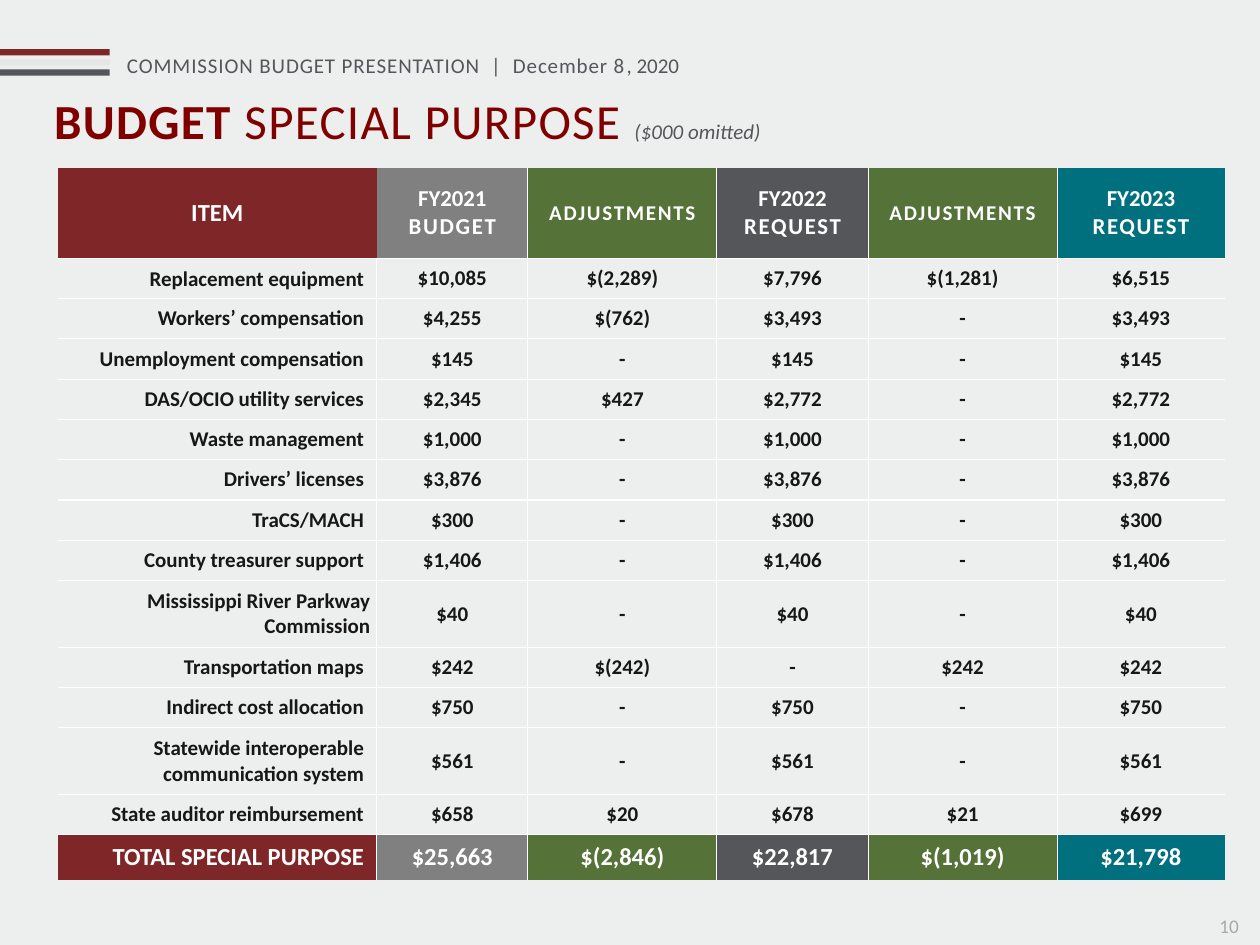
from lxml.etree import SubElement
from pptx import Presentation
from pptx.dml.color import RGBColor
from pptx.enum.shapes import MSO_SHAPE
from pptx.enum.text import MSO_ANCHOR, MSO_AUTO_SIZE, PP_ALIGN
from pptx.oxml.ns import qn
from pptx.util import Inches, Pt

FONT = "Calibri"
COLORS = {
    "background": "EDEEEE", "title": "800000", "maroon": "7F2629",
    "stripe": "E7E6E6", "slate": "54565A", "gray": "808080",
    "green": "557238", "teal": "00707F", "white": "FFFFFF",
    "ink": "181717", "header": "55565A", "page": "A7A8A9",
}
COLUMN_FILLS = ["maroon", "gray", "green", "slate", "green", "teal"]
COLUMN_WIDTHS = [2.53, 1.2, 1.5, 1.2, 1.5, 1.33]
HEADINGS = [["ITEM"], ["FY2021", "BUDGET"], ["ADJUSTMENTS"],
            ["FY2022", "REQUEST"], ["ADJUSTMENTS"], ["FY2023", "REQUEST"]]
# Size and letter spacing of each heading line
HEADING_STYLES = {"ITEM": (14, 0), "ADJUSTMENTS": (12, 1),
                  "BUDGET": (13, 1), "REQUEST": (13, 1)}
FISCAL_YEAR_STYLE = (13, 0)
ITEMS = [
    ["Replacement equipment", "$10,085", "$(2,289)", "$7,796", "$(1,281)", "$6,515"],
    ["Workers’ compensation", "$4,255", "$(762)", "$3,493", "-", "$3,493"],
    ["Unemployment compensation", "$145", "-", "$145", "-", "$145"],
    ["DAS/OCIO utility services", "$2,345", "$427", "$2,772", "-", "$2,772"],
    ["Waste management", "$1,000", "-", "$1,000", "-", "$1,000"],
    ["Drivers’ licenses", "$3,876", "-", "$3,876", "-", "$3,876"],
    ["TraCS/MACH", "$300", "-", "$300", "-", "$300"],
    ["County treasurer support", "$1,406", "-", "$1,406", "-", "$1,406"],
    ["Mississippi River Parkway Commission", "$40", "-", "$40", "-", "$40"],
    ["Transportation maps", "$242", "$(242)", "-", "$242", "$242"],
    ["Indirect cost allocation", "$750", "-", "$750", "-", "$750"],
    ["Statewide interoperable communication system", "$561", "-", "$561", "-", "$561"],
    ["State auditor reimbursement", "$658", "$20", "$678", "$21", "$699"],
]
TOTALS = ["TOTAL SPECIAL PURPOSE", "$25,663", "$(2,846)", "$22,817", "$(1,019)", "$21,798"]
TWO_LINE_LABEL = 30  # labels longer than this wrap


def rgb(name):
    return RGBColor.from_string(COLORS[name])


def style_font(font, size, color, bold=False, italic=False):
    font.name, font.size = FONT, Pt(size)
    font.bold, font.italic = bold, italic
    font.color.rgb = rgb(color)


def add_run(paragraph, text, spacing=0):
    """Add a run with letter spacing in points."""
    run = paragraph.add_run()
    run.text = text
    if spacing:
        run.font._element.set("spc", str(int(spacing * 100)))
    return run


def add_text_box(slide, left, top, width, height):
    frame = slide.shapes.add_textbox(
        Inches(left), Inches(top), Inches(width), Inches(height)).text_frame
    frame.word_wrap = True
    return frame.paragraphs[0]


def add_header(slide):
    for index, color in enumerate(["maroon", "stripe", "slate"]):
        bar = slide.shapes.add_shape(
            MSO_SHAPE.RECTANGLE, 0, Inches(0.39 + 0.08 * index), Inches(0.87), Inches(0.05))
        bar.shadow.inherit = False
        bar.fill.solid()
        bar.fill.fore_color.rgb = rgb(color)
        bar.line.fill.background()
    header = add_text_box(slide, 0.91, 0.37, 4.84, 0.5)
    style_font(header.font, 12, "header")
    add_run(header, "COMMISSION BUDGET PRESENTATION  |  December 8", 0.5)
    add_run(header, ", 2020")


def add_title(slide):
    title = slide.shapes.title
    title.left, title.top = Inches(0.33), Inches(0.67)
    title.width, title.height = Inches(9.08), Inches(0.98)
    frame = title.text_frame
    frame.auto_size = MSO_AUTO_SIZE.NONE
    frame.vertical_anchor = MSO_ANCHOR.TOP
    heading = frame.paragraphs[0]
    heading.alignment = PP_ALIGN.LEFT
    style_font(add_run(heading, "BUDGET ", 0.8).font, 28, "title", bold=True)
    style_font(add_run(heading, "SPECIAL PURPOSE ", 0.8).font, 28, "title")
    style_font(add_run(heading, "($000 omitted)").font, 12, "slate", italic=True)


def set_borders(cell, visible):
    """Draw white rules on the sides in visible and none on the others."""
    properties = cell._tc.get_or_add_tcPr()
    for position, side in enumerate("LRTB"):
        line = properties.makeelement(qn(f"a:ln{side}"), {"w": str(Pt(0.75))})
        if side in visible:
            fill = SubElement(line, qn("a:solidFill"))
            SubElement(fill, qn("a:srgbClr"), val=COLORS["white"])
        else:
            SubElement(line, qn("a:noFill"))
        properties.insert(position, line)


def inner_sides(row, column, last_row, last_column):
    """Sides facing another cell; the first heading joins its neighbour."""
    sides = {"L": column > 0, "R": column < last_column,
             "T": row > 0, "B": row < last_row}
    if row == 0:
        sides["L"] = column > 1
        sides["R"] = 0 < column < last_column
    return [side for side, shown in sides.items() if shown]


def fill_cell(cell, lines, styles, color, align, fill=None):
    cell.vertical_anchor = MSO_ANCHOR.MIDDLE
    if fill:
        cell.fill.solid()
        cell.fill.fore_color.rgb = rgb(fill)
    else:
        cell.fill.background()
    frame = cell.text_frame
    for index, (text, (size, spacing)) in enumerate(zip(lines, styles)):
        paragraph = frame.add_paragraph() if index else frame.paragraphs[0]
        paragraph.alignment = align
        add_run(paragraph, text, spacing)
        style_font(paragraph.font, size, color, bold=True)


def add_budget_table(slide):
    heights = [0.72] + [0.53 if len(item[0]) > TWO_LINE_LABEL else 0.32 for item in ITEMS] + [0.36]
    last_row, last_column = len(heights) - 1, len(COLUMN_WIDTHS) - 1
    table = slide.shapes.add_table(
        len(heights), len(COLUMN_WIDTHS), Inches(0.46), Inches(1.33),
        Inches(sum(COLUMN_WIDTHS)), Inches(sum(heights))).table
    table.horz_banding = False
    for column, width in zip(table.columns, COLUMN_WIDTHS):
        column.width = Inches(width)
    for row, height in zip(table.rows, heights):
        row.height = Inches(height)

    for column, lines in enumerate(HEADINGS):
        cell = table.cell(0, column)
        styles = [HEADING_STYLES.get(line, FISCAL_YEAR_STYLE) for line in lines]
        fill_cell(cell, lines, styles, "white", PP_ALIGN.CENTER, COLUMN_FILLS[column])
        cell.margin_left = cell.margin_right = Inches(0.05)
    for row, values in enumerate(ITEMS + [TOTALS], start=1):
        is_total = row == last_row
        size, color = (14, "white") if is_total else (12, "ink")
        for column, value in enumerate(values):
            align = PP_ALIGN.CENTER if column else PP_ALIGN.RIGHT
            fill = COLUMN_FILLS[column] if is_total else None
            fill_cell(table.cell(row, column), [value], [(size, 0)], color, align, fill)
    for row in range(last_row + 1):
        for column in range(last_column + 1):
            set_borders(table.cell(row, column),
                        inner_sides(row, column, last_row, last_column))

    first_label = table.cell(1, 0).text_frame.paragraphs[0]
    first_label.line_spacing, first_label.space_after = 1.07, Pt(8)
    parkway_label = table.cell(9, 0)
    parkway_label.margin_left = parkway_label.margin_right = Inches(0.05)


def add_page_number(slide):
    page = add_text_box(slide, 9.58, 7.21, 2.33, 0.4)
    add_run(page, "10")
    style_font(page.font, 11, "page")


def main():
    presentation = Presentation()
    presentation.slide_width, presentation.slide_height = Inches(10), Inches(7.5)
    slide = presentation.slides.add_slide(presentation.slide_layouts[5])
    slide.background.fill.solid()
    slide.background.fill.fore_color.rgb = rgb("background")
    add_header(slide)
    add_title(slide)
    add_page_number(slide)
    add_budget_table(slide)
    presentation.save("out.pptx")


if __name__ == "__main__":
    main()
